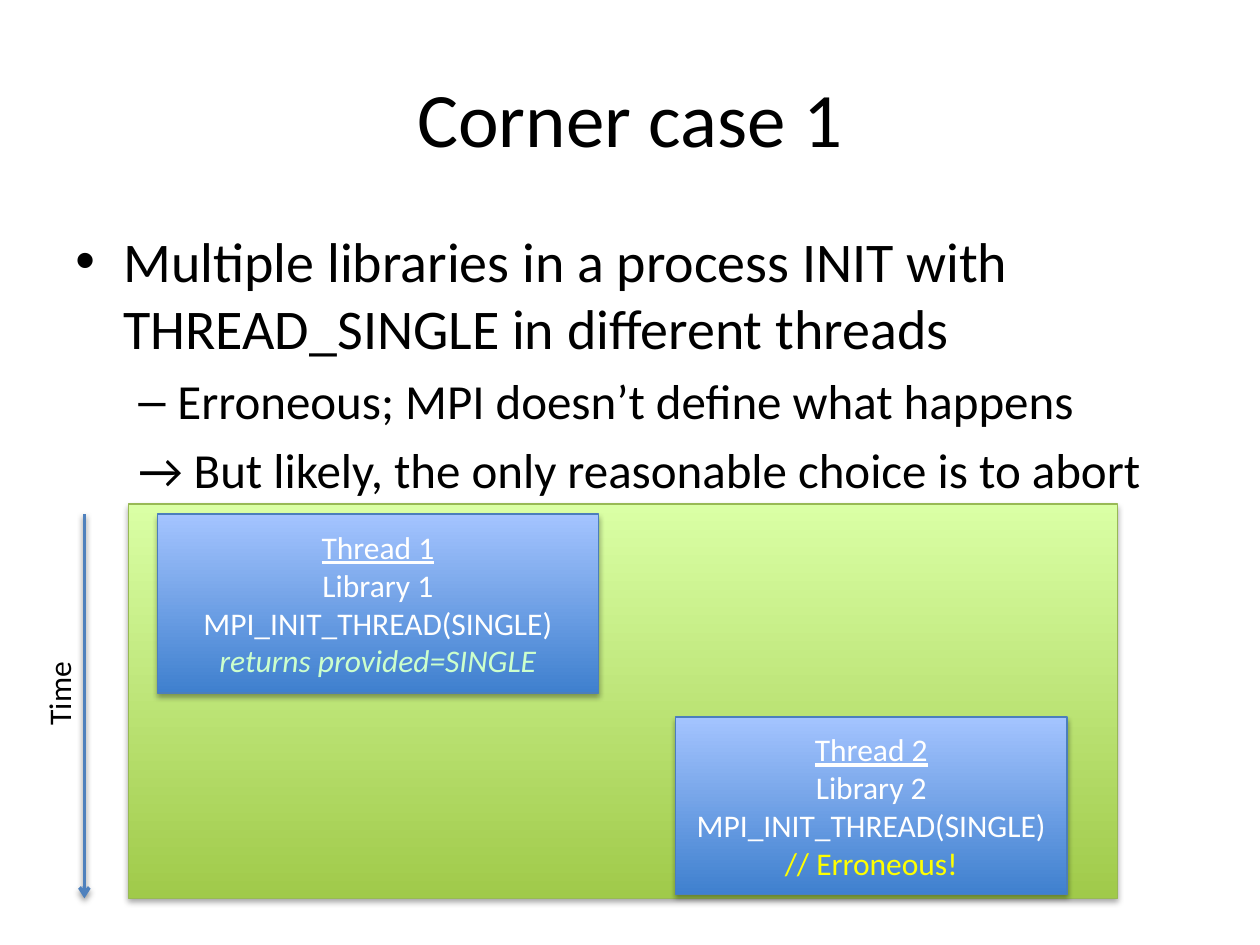
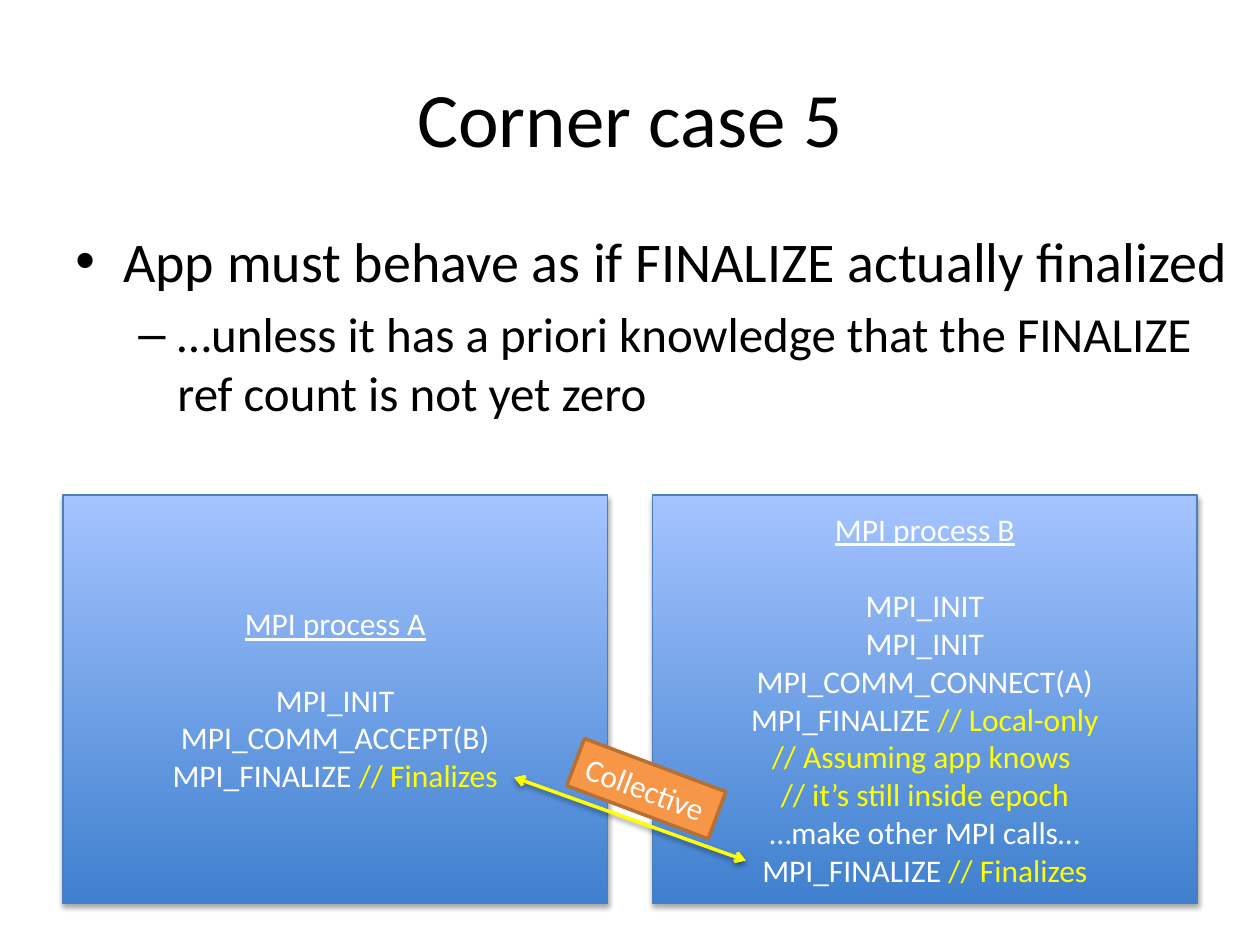
from lxml.etree import SubElement
from pptx import Presentation
from pptx.dml.color import RGBColor
from pptx.enum.shapes import MSO_CONNECTOR, MSO_SHAPE
from pptx.enum.text import MSO_ANCHOR, MSO_AUTO_SIZE, PP_ALIGN
from pptx.oxml.ns import qn
from pptx.util import Inches, Pt

BLACK = RGBColor(0x00, 0x00, 0x00)
WHITE = RGBColor(0xFF, 0xFF, 0xFF)
YELLOW = RGBColor(0xFF, 0xFF, 0x00)
MINT = RGBColor(0xCC, 0xFF, 0xCC)
ARROW_BLUE = RGBColor(0x4F, 0x81, 0xBD)
ORANGE = RGBColor(0xF7, 0x96, 0x46)
ORANGE_EDGE = RGBColor(0xB7, 0x6F, 0x34)
BLUE_PANEL = (RGBColor(0x3F, 0x80, 0xCE), RGBColor(0xA4, 0xC4, 0xFF), RGBColor(0x4B, 0x7E, 0xBC))
GREEN_PANEL = (RGBColor(0xA0, 0xCA, 0x4A), RGBColor(0xDA, 0xFF, 0xA5), RGBColor(0x98, 0xB9, 0x55))

FONT = "Calibri"
CODE_SIZE = 18
BLANK_LINE = Pt(22)
BULLETS = {
    "main": {"size": 32, "level": 0, "margin": 0.38, "hang": -0.38, "mark": "•"},
    "sub": {"size": 28, "level": 1, "margin": 0.81, "hang": -0.31, "mark": "–"},
    "plain": {"size": 28, "level": 1, "margin": 0.5, "hang": 0, "mark": None},
}


def apply_format(target, values):
    """Set every attribute named in values on target."""
    for name, value in values.items():
        setattr(target, name, value)


def add_run(paragraph, text, size, color, **style):
    """Append one styled run to a paragraph."""
    run = paragraph.add_run()
    run.text = text
    apply_format(run.font, {"name": FONT, "size": Pt(size), **style})
    run.font.color.rgb = color


def add_shadow(shape, opacity, distance):
    """Give a shape a soft shadow straight below it."""
    effects = SubElement(shape._element.spPr, qn("a:effectLst"))
    shadow = SubElement(effects, qn("a:outerShdw"), blurRad=str(Pt(3.1)),
                        dist=str(Pt(distance)), dir="5400000", rotWithShape="0")
    color = SubElement(shadow, qn("a:srgbClr"), val=str(BLACK))
    SubElement(color, qn("a:alpha"), val=str(opacity * 1000))


def add_text_box(slide, box, **frame_format):
    """Add a text box and return its shape."""
    shape = slide.shapes.add_textbox(*map(Inches, box))
    apply_format(shape.text_frame, {"word_wrap": True, **frame_format})
    return shape


def add_title(slide, text):
    """Add the centred slide title."""
    shape = add_text_box(slide, (0.5, 0.3, 9, 1.25), vertical_anchor=MSO_ANCHOR.MIDDLE)
    paragraph = shape.text_frame.paragraphs[0]
    paragraph.alignment = PP_ALIGN.CENTER
    add_run(paragraph, text, 44, BLACK)


def add_body(slide, width, points):
    """Add the bulleted points below the title."""
    frame = add_text_box(slide, (0.5, 1.75, width, 4.95)).text_frame
    for index, (kind, text) in enumerate(points):
        bullet = BULLETS[kind]
        paragraph = frame.add_paragraph() if index else frame.paragraphs[0]
        apply_format(paragraph, {"level": bullet["level"],
                                 "space_before": Pt(bullet["size"] * 0.2)})
        properties = paragraph._p.get_or_add_pPr()
        properties.set("marL", str(Inches(bullet["margin"])))
        properties.set("indent", str(Inches(bullet["hang"])))
        if bullet["mark"]:
            SubElement(properties, qn("a:buFont"), typeface="Arial")
            SubElement(properties, qn("a:buChar"), char=bullet["mark"])
        else:
            SubElement(properties, qn("a:buNone"))
        add_run(paragraph, text, bullet["size"], BLACK)


def add_panel(slide, box, colors, heading=None, lines=(), heading_gap=0):
    """Add a gradient panel with an underlined heading and code lines."""
    bottom, top, edge = colors
    shape = slide.shapes.add_shape(MSO_SHAPE.RECTANGLE, *map(Inches, box))
    shape.fill.gradient()
    shape.fill.gradient_angle = 90
    for stop, color in zip(shape.fill.gradient_stops, (bottom, top)):
        stop.color.rgb = color
    shape.line.color.rgb = edge
    shape.line.width = Pt(0.75)
    add_shadow(shape, 35, 1.8)
    if heading is None:
        return
    frame = shape.text_frame
    apply_format(frame, {"word_wrap": True, "vertical_anchor": MSO_ANCHOR.MIDDLE})
    paragraph = frame.paragraphs[0]
    apply_format(paragraph, {"alignment": PP_ALIGN.CENTER, "space_after": heading_gap})
    add_run(paragraph, heading, CODE_SIZE, WHITE, underline=True)
    for code, comment in lines:
        paragraph = frame.add_paragraph()
        paragraph.alignment = PP_ALIGN.CENTER
        if code:
            add_run(paragraph, code, CODE_SIZE, WHITE)
        if comment.startswith("//"):
            add_run(paragraph, comment, CODE_SIZE, YELLOW)
        elif comment:
            add_run(paragraph, comment, CODE_SIZE, MINT, italic=True)


def add_arrow(slide, start, end, color, ends):
    """Add a shadowed straight arrow with heads at the named ends."""
    points = map(Inches, (*start, *end))
    connector = slide.shapes.add_connector(MSO_CONNECTOR.STRAIGHT, *points)
    connector.line.color.rgb = color
    connector.line.width = Pt(2)
    for name in ends:
        SubElement(connector.line._get_or_add_ln(), qn(f"a:{name}"), type="arrow")
    add_shadow(connector, 38, 1.6)


def add_label(slide, box, text, color, rotation):
    """Add a rotated one-line label and return its shape."""
    shape = add_text_box(slide, box, word_wrap=False, auto_size=MSO_AUTO_SIZE.SHAPE_TO_FIT_TEXT)
    shape.rotation = rotation
    add_run(shape.text_frame.paragraphs[0], text, CODE_SIZE, color)
    return shape


def add_timeline(slide, left, top, height):
    """Draw the time axis and the two threads in their process."""
    add_panel(slide, (left + 0.35, top, 7.85, height), GREEN_PANEL)
    init = ("MPI_INIT_THREAD(SINGLE)", "")
    add_panel(slide, (left + 0.58, top + 0.08, 3.5, 1.42), BLUE_PANEL, "Thread 1",
              [("Library 1", ""), init, ("", "returns provided=SINGLE")])
    add_panel(slide, (left + 4.69, top + 1.69, 3.11, 1.41), BLUE_PANEL, "Thread 2",
              [("Library 2", ""), init, ("", "// Erroneous!")])
    add_arrow(slide, (left, top + 0.08), (left, top + height), ARROW_BLUE, ["tailEnd"])
    add_label(slide, (left - 0.56, top + 1.3, 0.71, 0.4), "Time", BLACK, 270)


def add_processes(slide, left, top, width, height, gap):
    """Draw the two processes and the collective call that joins them."""
    finalize = ("MPI_FINALIZE ", "// Finalizes")
    processes = {
        "MPI process A": [("MPI_INIT", ""), ("MPI_COMM_ACCEPT(B)", ""), finalize],
        "MPI process B": [
            ("MPI_INIT", ""),
            ("MPI_INIT", ""),
            ("MPI_COMM_CONNECT(A)", ""),
            ("MPI_FINALIZE ", "// Local-only"),
            ("", "// Assuming app knows "),
            ("", "// it’s still inside epoch"),
            ("…make other MPI calls…", ""),
            finalize,
        ],
    }
    for column, (heading, lines) in enumerate(processes.items()):
        box = (left + column * (width + gap), top, width, height)
        add_panel(slide, box, BLUE_PANEL, heading, lines, BLANK_LINE)
    add_arrow(slide, (left + 3.58, top + 2.24), (left + 5.42, top + 2.9), YELLOW,
              ["headEnd", "tailEnd"])
    label = add_label(slide, (left + 4.03, top + 2.13, 1.2, 0.4), "Collective", WHITE, 20.6)
    label.fill.solid()
    label.fill.fore_color.rgb = ORANGE
    label.line.color.rgb = ORANGE_EDGE
    label.line.width = Pt(2)


def add_case(presentation, number, body_width, points):
    """Add a corner-case slide with its title and points."""
    slide = presentation.slides.add_slide(presentation.slide_layouts[6])
    add_title(slide, f"Corner case {number}")
    add_body(slide, body_width, points)
    return slide


def main():
    """Build and save the presentation."""
    presentation = Presentation()
    apply_format(presentation, {"slide_width": Inches(10), "slide_height": Inches(7.5)})
    threads_slide = add_case(presentation, 1, 9, [
        ("main", "Multiple libraries in a process INIT with THREAD_SINGLE in different threads"),
        ("sub", "Erroneous; MPI doesn’t define what happens"),
        ("plain", "→ But likely, the only reasonable choice is to abort"),
    ])
    add_timeline(threads_slide, left=0.67, top=4, height=3.13)
    finalize_slide = add_case(presentation, 5, 9.5, [
        ("main", "App must behave as if FINALIZE actually finalized"),
        ("sub", "…unless it has a priori knowledge that the FINALIZE ref count is not yet zero"),
    ])
    add_processes(finalize_slide, left=0.5, top=3.93, width=4.32, height=3.24, gap=0.36)
    presentation.save("out.pptx")


if __name__ == "__main__":
    main()
